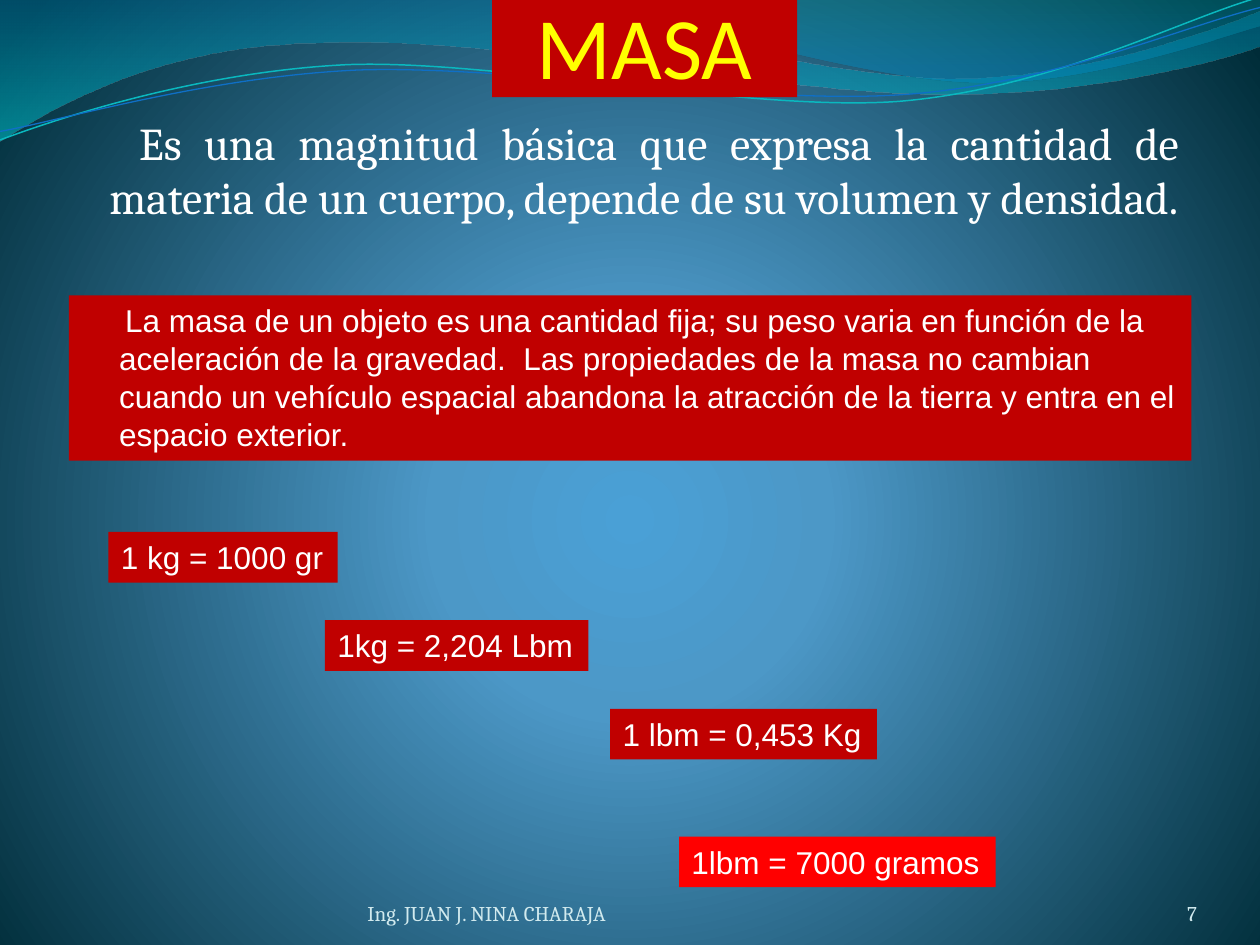
from lxml import etree
from pptx import Presentation
from pptx.dml.color import RGBColor
from pptx.enum.text import MSO_ANCHOR, MSO_AUTO_SIZE, PP_ALIGN
from pptx.oxml.ns import qn
from pptx.util import Pt

LEFT, CENTER, RIGHT, JUSTIFY = (PP_ALIGN.LEFT, PP_ALIGN.CENTER,
                                PP_ALIGN.RIGHT, PP_ALIGN.JUSTIFY)
TOP, BOTTOM = MSO_ANCHOR.TOP, MSO_ANCHOR.BOTTOM
NO_FIT = MSO_AUTO_SIZE.NONE

COLORS = {
    "white": "FFFFFF", "yellow": "FFFF00", "pale": "D1EAEE",
    "dark_red": "C00000", "red": "FF0000",
    "glow": "4AA0D6", "mid": "4C98C7", "night": "002C38",
    "wave_blue": "0074A1", "wave_cyan": "00C6CF",
    "crest_teal": "00A1A9", "crest_blue": "008BBF",
    "line_teal": "0AB8BF", "line_blue": "0F6FC6",
}
INSETS = (7.2, 3.6, 7.2, 3.6)
FOOTER = {"size": 12, "font": "Cambria", "color": "pale",
          "anchor": BOTTOM, "insets": (0, 0, 0, 0)}
BOX = {"size": 18, "font": "Arial", "color": "white", "fill": "dark_red"}
LINE_TILT = 357.3

# Segments in points: a pair is a line end, six numbers are a Bezier curve.
WAVE = [(0, -0.7), (317, -0.7), (343, 12, 478, 45, 546, 45),
        (614, 45, 690, 19, 720, 6.5), (721, 26), (708, 32, 626, 55, 537, 54),
        (448, 54, 275, 20, 185, 24.5), (93, 25, 33, 60, -0.7, 81), (0, -0.7)]
CREST = [(345, -0.7), (366, 8, 491, 45, 554, 47),
         (616, 50, 692, 23, 720, 15), (720, 0), (345, -0.7)]
# The two lines are given level, before their tilt.
TEAL_LINE = [(-1.4, 63), (34.2, 51.7, 114.3, 29.4, 199.4, 29.4),
             (284.4, 30.5, 425.9, 67.2, 512, 65.2),
             (599.3, 62.3, 676.1, 25.9, 720.6, 15.6)]
BLUE_LINE = [(-1.1, 58.1), (33.1, 53.7, 118.2, 32.6, 204.3, 32.7),
             (290.3, 33.7, 429.1, 63.3, 515.3, 61.4),
             (601.5, 59.4, 677, 29.9, 721.4, 21.3)]

EQUIVALENCES = [
    ("1 kg = 1000 gr", 62, 304, 131, "dark_red"),
    ("1kg = 2,204 Lbm", 185.7, 354.4, 150.5, "dark_red"),
    ("1 lbm = 0,453 Kg", 348.7, 405, 152.5, "dark_red"),
    ("1lbm = 7000 gramos", 388, 478, 181, "red"),
]


def rgb(name):
    return RGBColor.from_string(COLORS[name])


def set_gradient(fill, element, stops, circle=None):
    """Fill with (position, colour, opacity) stops, downward or circular."""
    fill.solid()
    solid = next(element.iter(qn("a:solidFill")))
    grad = etree.Element(qn("a:gradFill"), rotWithShape="1")
    stop_list = etree.SubElement(grad, qn("a:gsLst"))
    for position, color, opacity in stops:
        stop = etree.SubElement(stop_list, qn("a:gs"), pos=str(position * 1000))
        clr = etree.SubElement(stop, qn("a:srgbClr"), val=COLORS[color])
        if opacity < 100:
            etree.SubElement(clr, qn("a:alpha"), val=str(opacity * 1000))
    if circle:
        shade = etree.SubElement(grad, qn("a:path"), path="circle")
        etree.SubElement(shade, qn("a:fillToRect"),
                         {side: str(v * 1000) for side, v in circle.items()})
    else:
        etree.SubElement(grad, qn("a:lin"), ang="5400000", scaled="0")
    solid.getparent().replace(solid, grad)


def add_outline(s, segments, close):
    """Build the outline from segment ends, then bend the curved segments."""
    start, *ends = [(Pt(seg[-2]), Pt(seg[-1])) for seg in segments]
    builder = s.shapes.build_freeform(*start)
    builder.add_line_segments(ends, close=close)
    sp = builder.convert_to_shape()
    sp.shadow.inherit = False
    lines = list(sp.element.iter(qn("a:lnTo")))
    for line, seg in zip(lines, segments[1:]):
        if len(seg) == 6:
            curve = etree.Element(qn("a:cubicBezTo"))
            for x, y in zip(seg[::2], seg[1::2]):
                etree.SubElement(curve, qn("a:pt"), x=str(Pt(x) - sp.left),
                                 y=str(Pt(y) - sp.top))
            line.getparent().replace(line, curve)
    return sp


def add_wave(s, segments, stops):
    sp = add_outline(s, segments, True)
    sp.line.fill.background()
    set_gradient(sp.fill, sp.element, stops)


def add_wave_line(s, segments, color, width):
    sp = add_outline(s, segments, False)
    sp.rotation = LINE_TILT
    sp.fill.background()
    sp.line.color.rgb = rgb(color)
    sp.line.width = Pt(width)


def write(sp, text, box, size, font, color, fill=None, align=LEFT, anchor=TOP,
          insets=INSETS, wrap=True, margin=0, indent=0):
    """Place a text shape and give it one formatted paragraph."""
    for name, value in zip(("left", "top", "width", "height"), box):
        setattr(sp, name, Pt(value))
    if fill:
        sp.fill.solid()
        sp.fill.fore_color.rgb = rgb(fill)
    tf = sp.text_frame
    frame_format = {"word_wrap": wrap, "auto_size": NO_FIT,
                    "vertical_anchor": anchor}
    sides = ("margin_left", "margin_top", "margin_right", "margin_bottom")
    frame_format.update(zip(sides, map(Pt, insets)))
    for name, value in frame_format.items():
        setattr(tf, name, value)
    p = tf.paragraphs[0]
    p.alignment = align
    pPr = p._p.get_or_add_pPr()
    pPr.set("marL", str(Pt(margin)))
    pPr.set("indent", str(Pt(indent)))
    etree.SubElement(pPr, qn("a:buNone"))
    r = p.add_run()
    r.text = text
    for name, value in {"size": Pt(size), "name": font}.items():
        setattr(r.font, name, value)
    r.font.color.rgb = rgb(color)


def add_text(s, text, box, **style):
    write(s.shapes.add_textbox(0, 0, 0, 0), text, box, **style)


def main():
    prs = Presentation()
    prs.slide_width, prs.slide_height = Pt(720), Pt(540)
    s = prs.slides.add_slide(prs.slide_layouts[1])
    title, body = s.placeholders

    set_gradient(s.background.fill, s.element,
                 [(0, "glow", 100), (25, "mid", 100), (100, "night", 100)],
                 circle={"l": 10, "t": 110, "r": 10, "b": 100})
    add_wave(s, WAVE, [(0, "wave_blue", 45), (100, "wave_cyan", 55)])
    add_wave(s, CREST, [(0, "crest_teal", 30), (80, "crest_blue", 45)])
    add_wave_line(s, TEAL_LINE, "line_teal", 0.85)
    add_wave_line(s, BLUE_LINE, "line_blue", 0.75)

    # Bring the placeholders in front of the waves.
    for sp in (title, body):
        sp.element.getparent().append(sp.element)
    write(title, "MASA", (281.2, 0, 174.4, 55.5), size=50, font="Calibri",
          color="yellow", fill="dark_red", align=CENTER, anchor=BOTTOM,
          insets=(0, 3.6, 0, 0))
    write(body, "Es una magnitud básica que expresa la cantidad de materia "
          "de un cuerpo, depende de su volumen y densidad.",
          (33.75, 62, 648, 95), size=26, font="Cambria", color="white",
          align=JUSTIFY, margin=21.6, indent=17)

    add_text(s, "Ing. JUAN J. NINA CHARAJA", (210, 500.2, 264, 28.8), **FOOTER)
    add_text(s, "7", (624, 500.2, 60, 28.8), align=RIGHT, **FOOTER)
    add_text(s, "La masa de un objeto es una cantidad fija; su peso varia en "
             "función de la aceleración de la gravedad.  Las propiedades de la "
             "masa no cambian cuando un vehículo espacial abandona la atracción "
             "de la tierra y entra en el espacio exterior.",
             (39.4, 168.75, 641.4, 94.5), margin=21.6, indent=3.4, **BOX)
    for text, left, top, width, fill in EQUIVALENCES:
        add_text(s, text, (left, top, width, 29), wrap=False,
                 **{**BOX, "fill": fill})

    prs.save("out.pptx")


if __name__ == "__main__":
    main()
